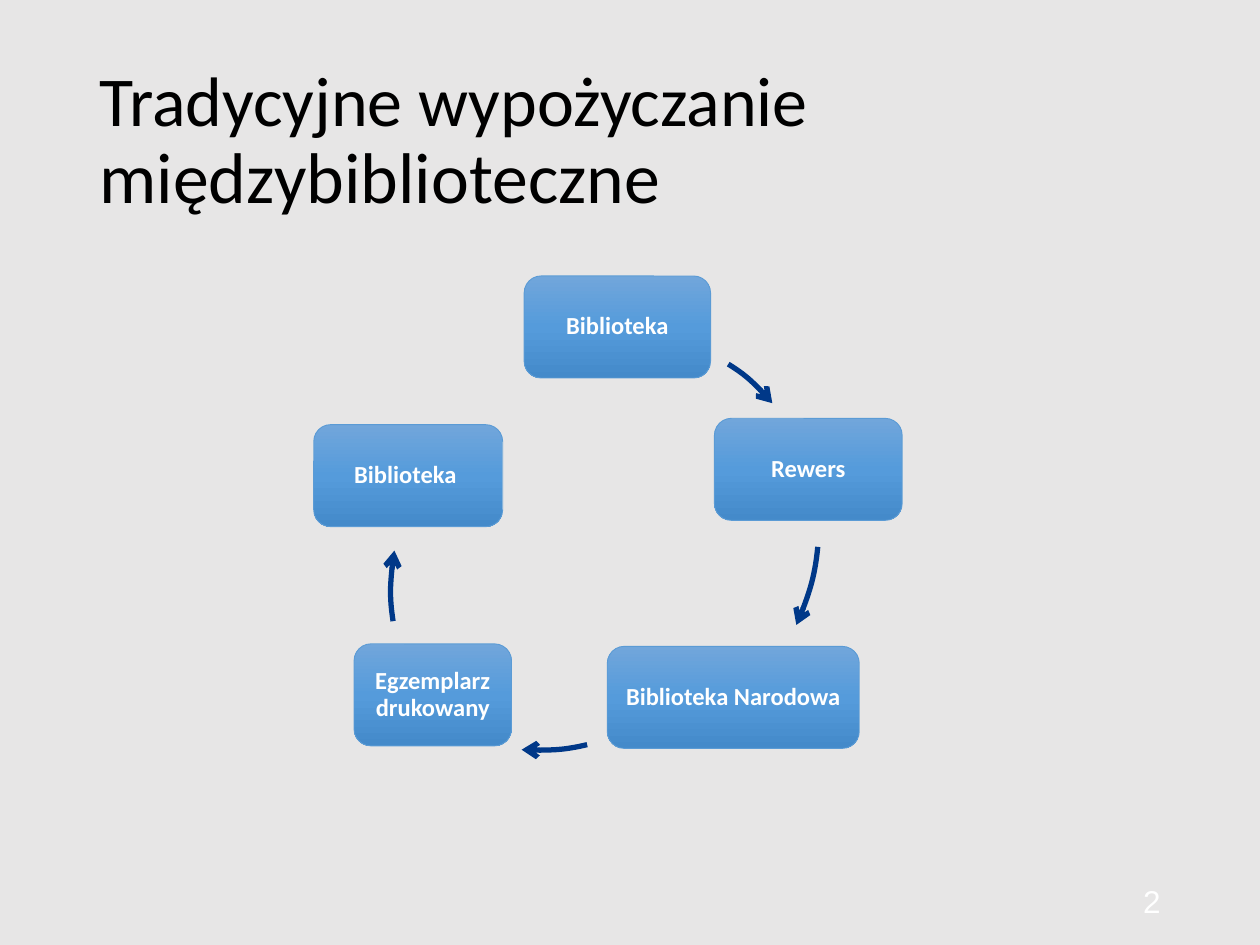
from copy import deepcopy

from lxml import etree
from pptx import Presentation
from pptx.dml.color import RGBColor
from pptx.enum import shapes, text
from pptx.oxml.ns import qn
from pptx.util import Inches, Pt

COLORS = {
    "background": "E7E6E6",
    "title": "000000",
    "white": "FFFFFF",
    "box_top": "71A6DB",
    "box_middle": "559BDB",
    "box_bottom": "448ACA",
    "box_line": "5B9BD5",
    "arrow": "003888",
}
BOX_HEIGHT = 0.81
CIRCLE = 3.25  # side of the square frame around each arrow's circle

# left, top, width, label
STEPS = [
    (4.16, 2.19, 1.48, "Biblioteka"),
    (5.67, 3.32, 1.49, "Rewers"),
    (4.82, 5.13, 2, "Biblioteka Narodowa"),
    (2.81, 5.11, 1.25, "Egzemplarz drukowany"),
    (2.49, 3.37, 1.5, "Biblioteka "),
]

# left and top of the circle's frame; start, two control points, end
ARROWS = [
    (3.26, 2.62, [(5.78, 2.89), (5.91, 2.97), (6.03, 3.08), (6.13, 3.2)]),
    (3.24, 2.59, [(6.49, 4.34), (6.47, 4.55), (6.41, 4.76), (6.32, 4.96)]),
    (2.67, 2.7, [(4.66, 5.91), (4.49, 5.95), (4.31, 5.96), (4.14, 5.95)]),
    (3.1, 3.08, [(3.12, 4.93), (3.09, 4.74), (3.1, 4.55), (3.13, 4.37)]),
]


def rgb(name):
    return RGBColor.from_string(COLORS[name])


class CycleSlide:
    font = "Calibri"

    def __init__(self, prs):
        self.s = prs.slides.add_slide(prs.slide_layouts[5])
        fill = self.s.background.fill
        fill.solid()
        fill.fore_color.rgb = rgb("background")

    def run(self, p, label, size, color, bold=False, font=None):
        r = p.add_run()
        r.text = label
        r.font.name = font or self.font
        r.font.size = Pt(size)
        r.font.bold = bold
        r.font.color.rgb = rgb(color)

    def title(self, runs):
        sp = self.s.shapes.title
        sp.left, sp.top = Inches(0.69), Inches(0.4)
        sp.width, sp.height = Inches(8.62), Inches(1.45)
        tf = sp.text_frame
        tf.auto_size = text.MSO_AUTO_SIZE.NONE
        tf.vertical_anchor = text.MSO_ANCHOR.MIDDLE
        p = tf.paragraphs[0]
        p.alignment = text.PP_ALIGN.LEFT
        p.line_spacing = 0.9
        for label, size in runs:
            self.run(p, label, size, "title")

    def box(self, left, top, width, label):
        sp = self.s.shapes.add_shape(
            shapes.MSO_SHAPE.ROUNDED_RECTANGLE,
            Inches(left), Inches(top), Inches(width), Inches(BOX_HEIGHT))
        sp.shadow.inherit = False
        self.gradient(sp, ["box_top", "box_middle", "box_bottom"])
        sp.line.color.rgb = rgb("box_line")
        sp.line.width = Pt(0.5)
        tf = sp.text_frame
        tf.word_wrap = True
        tf.vertical_anchor = text.MSO_ANCHOR.MIDDLE
        tf.margin_left = tf.margin_right = Inches(0.1)
        tf.margin_top = tf.margin_bottom = Inches(0.1)
        p = tf.paragraphs[0]
        p.alignment = text.PP_ALIGN.CENTER
        p.line_spacing = 0.9
        self.run(p, label, 14, "white", bold=True)

    def gradient(self, sp, names):
        """Fill from top to bottom with three evenly spaced colours."""
        sp.fill.gradient()
        sp.fill.gradient_angle = 270
        stops = sp._element.spPr.find(qn("a:gradFill")).find(qn("a:gsLst"))
        stops.append(deepcopy(stops[0]))
        for i, (stop, name) in enumerate(zip(sp.fill.gradient_stops, names)):
            stop.position = i / 2
            stop.color.rgb = rgb(name)

    def curved_arrow(self, left, top, points):
        """Draw one cubic curve inside the square frame of its circle."""
        start, *rest = [(Inches(x), Inches(y)) for x, y in points]
        builder = self.s.shapes.build_freeform(*start)
        builder.add_line_segments(rest, close=False)
        sp = builder.convert_to_shape()
        sp.shadow.inherit = False
        sp.fill.background()
        sp.line.color.rgb = rgb("arrow")
        sp.line.width = Pt(3)
        sp.left, sp.top = Inches(left), Inches(top)
        sp.width = sp.height = Inches(CIRCLE)

        path = next(sp._element.iter(qn("a:path")))
        path.set("w", str(sp.width))
        path.set("h", str(sp.height))
        for pt, (x, y) in zip(path.iter(qn("a:pt")), [start, *rest]):
            pt.set("x", str(x - sp.left))
            pt.set("y", str(y - sp.top))
        curve = etree.SubElement(path, qn("a:cubicBezTo"))
        for segment in path.findall(qn("a:lnTo")):
            curve.append(segment[0])
            path.remove(segment)
        ln = sp._element.spPr.find(qn("a:ln"))
        etree.SubElement(ln, qn("a:tailEnd"), type="arrow")

    def page_number(self, number):
        sp = self.s.shapes.add_textbox(
            Inches(7.06), Inches(6.95), Inches(2.25), Inches(0.4))
        tf = sp.text_frame
        tf.word_wrap = True
        tf.vertical_anchor = text.MSO_ANCHOR.MIDDLE
        p = tf.paragraphs[0]
        p.alignment = text.PP_ALIGN.RIGHT
        self.run(p, number, 18, "white", font="Arial")


def main():
    prs = Presentation()
    prs.slide_width, prs.slide_height = Inches(10), Inches(7.5)
    slide = CycleSlide(prs)
    slide.title([("Tradycyjne wypożyczanie", 40), (" międzybiblioteczne", 41)])
    for step in STEPS:
        slide.box(*step)
    for arrow in ARROWS:
        slide.curved_arrow(*arrow)
    slide.page_number("2")
    prs.save("out.pptx")


if __name__ == "__main__":
    main()
